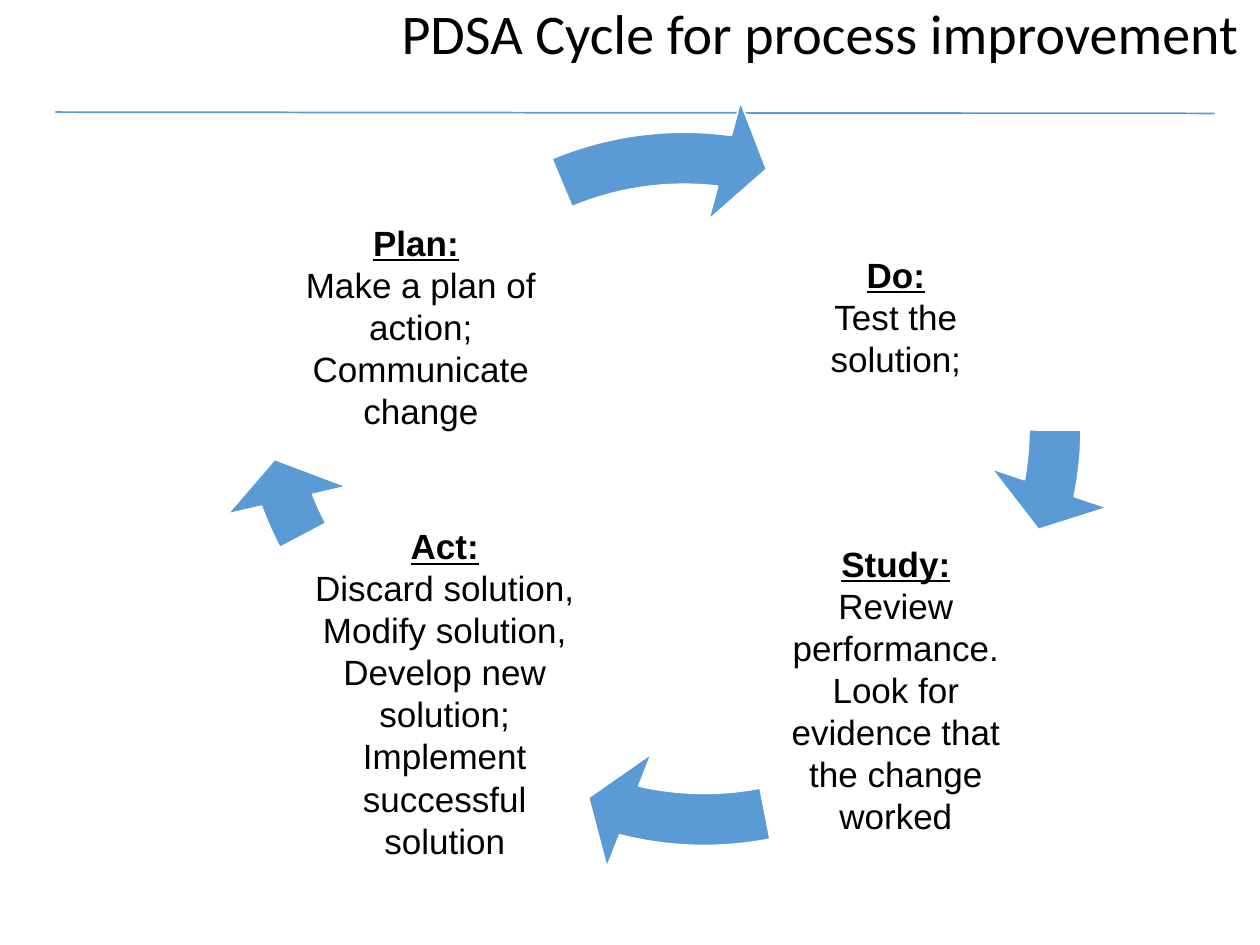
import dataclasses

import pptx
import pptx.dml.color
import pptx.enum.shapes
import pptx.enum.text
import pptx.oxml
import pptx.util

Inches = pptx.util.Inches


@dataclasses.dataclass(frozen=True)
class Theme:
    accent: str = "5B9BD5"
    background: str = "FFFFFF"
    text: str = "000000"
    title_font: str = "Calibri"
    body_font: str = "Arial"
    title_size: int = 32
    body_size: int = 20
    line_width: int = 1


THEME = Theme()
WIDTH, HEIGHT = 10, 7.5
ARROW_SIZE = 0.8 * HEIGHT
ARROW_THICKNESS, ARROW_HEAD_ANGLE, ARROW_HEAD_WIDTH = 0.069, 4.652, 0.081

STAGES = [
    ("Do:", "", ["Test the solution;"], (6.05, 1.45, 2.12, 2.12)),
    ("Study:", "", ["Review performance. Look for evidence that the change worked"],
     (6.05, 4.38, 2.12, 2.18)),
    ("Act:", "", ["Discard solution, Modify solution, Develop new solution;",
                  "Implement successful solution"], (2.43, 4.27, 2.2, 2.46)),
    ("Plan:", " ", ["Make a plan of action;", "Communicate change"],
     (2.28, 1.53, 2.12, 2.12)),
]
ARROWS = [
    (2.86, 0.4, 6.524, 0.18),
    (2.59, 0.99, 62.222, 47.36),
    (1.63, 0.08, 95.539, 91.358),
    (2.43, 0.77, 166.396, 148.383),
]


def rgb(value):
    return pptx.dml.color.RGBColor.from_string(value)


def add_run(paragraph, text, font, size, bold=False, underline=False):
    run = paragraph.add_run()
    run.text = text
    run.font.name = font
    run.font.size = pptx.util.Pt(size)
    run.font.bold = bold
    run.font.underline = underline
    run.font.color.rgb = rgb(THEME.text)


def format_title(slide, text):
    title = slide.shapes.title
    title.left, title.top = Inches(3.02), 0
    title.width, title.height = Inches(6.98), Inches(0.87)
    frame = title.text_frame
    frame.word_wrap = True
    frame.auto_size = pptx.enum.text.MSO_AUTO_SIZE.NONE
    frame.vertical_anchor = pptx.enum.text.MSO_ANCHOR.TOP
    paragraph = frame.paragraphs[0]
    paragraph.alignment = pptx.enum.text.PP_ALIGN.CENTER
    paragraph.line_spacing = 0.9
    add_run(paragraph, text, THEME.title_font, THEME.title_size)


def add_rule(slide):
    rule = slide.shapes.add_connector(
        pptx.enum.shapes.MSO_CONNECTOR.STRAIGHT,
        Inches(0.44), Inches(0.89), Inches(9.64), Inches(0.9))
    rule.line.color.rgb = rgb(THEME.accent)
    rule.line.width = pptx.util.Pt(THEME.line_width)
    properties = rule.element.spPr
    properties.append(properties.makeelement(pptx.oxml.ns.qn("a:effectLst"), {}))


def add_stage(group, heading, gap, details, box):
    frame = group.shapes.add_textbox(*map(Inches, box)).text_frame
    frame.word_wrap = True
    frame.vertical_anchor = pptx.enum.text.MSO_ANCHOR.MIDDLE
    frame.margin_left = frame.margin_right = Inches(0.03)
    frame.margin_top = frame.margin_bottom = Inches(0.03)
    paragraph = frame.paragraphs[0]
    paragraph.alignment = pptx.enum.text.PP_ALIGN.CENTER
    add_run(paragraph, heading, THEME.body_font, THEME.body_size, True, True)
    if gap:
        add_run(paragraph, gap, THEME.body_font, THEME.body_size, True)
    for detail in details:
        paragraph = frame.add_paragraph()
        paragraph.alignment = pptx.enum.text.PP_ALIGN.CENTER
        add_run(paragraph, detail, THEME.body_font, THEME.body_size)


def add_cycle_arrow(group, left, top, end_angle, start_angle):
    arrow = group.shapes.add_shape(
        pptx.enum.shapes.MSO_SHAPE.CIRCULAR_ARROW,
        *map(Inches, (left, top, ARROW_SIZE, ARROW_SIZE)))
    arrow.shadow.inherit = False
    arrow.fill.solid()
    arrow.fill.fore_color.rgb = rgb(THEME.accent)
    arrow.line.color.rgb = rgb(THEME.background)
    arrow.line.width = pptx.util.Pt(THEME.line_width)
    adjustments = (ARROW_THICKNESS, ARROW_HEAD_ANGLE, end_angle, start_angle,
                   ARROW_HEAD_WIDTH)
    for index, value in enumerate(adjustments):
        arrow.adjustments[index] = value


def main():
    presentation = pptx.Presentation()
    presentation.slide_width = Inches(WIDTH)
    presentation.slide_height = Inches(HEIGHT)
    slide = presentation.slides.add_slide(presentation.slide_layouts[5])
    add_rule(slide)
    format_title(slide, "PDSA Cycle for process improvement")
    cycle = slide.shapes.add_group_shape()
    for stage, arrow in zip(STAGES, ARROWS):
        add_stage(cycle, *stage)
        add_cycle_arrow(cycle, *arrow)
    presentation.save("out.pptx")


if __name__ == "__main__":
    main()
